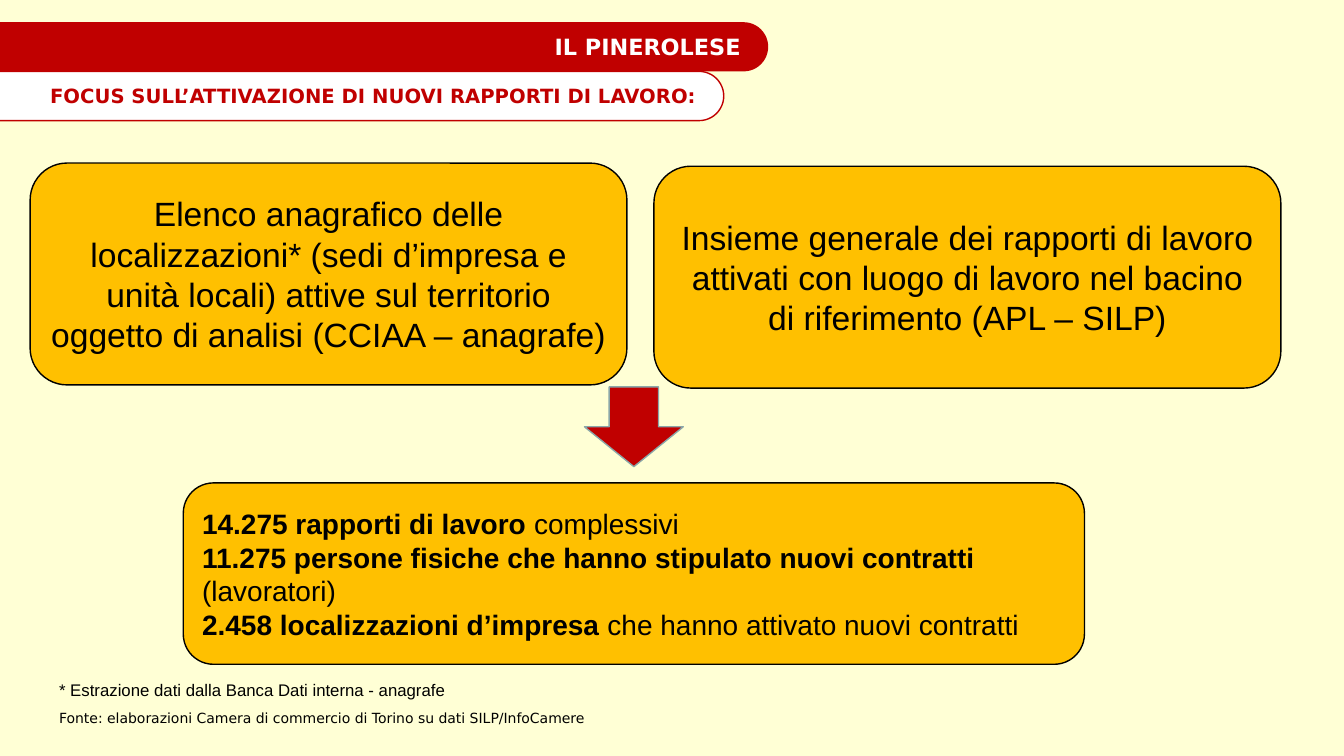
import dataclasses

import pptx
import pptx.dml.color
import pptx.enum.shapes
import pptx.enum.text
import pptx.util

Cm = pptx.util.Cm
Pt = pptx.util.Pt
Shapes = pptx.enum.shapes.MSO_SHAPE
Align = pptx.enum.text.PP_ALIGN
Anchor = pptx.enum.text.MSO_ANCHOR


@dataclasses.dataclass(frozen=True)
class Theme:
    background: str = "FFFFD5"
    red: str = "C00000"
    white: str = "FFFFFF"
    amber: str = "FFC000"
    black: str = "000000"
    arrow_outline: str = "8AA6A8"
    heading_font: str = "DejaVu Sans"
    body_font: str = "Arial"
    title_size: int = 16
    subtitle_size: int = 14
    source_size: int = 24
    result_size: int = 20
    note_size: int = 12
    credit_size: int = 10


THEME = Theme()


def rgb(value):
    return pptx.dml.color.RGBColor.from_string(value)


def write_text(shape, paragraphs, *, size, font=THEME.body_font, color=THEME.black,
               align=Align.LEFT, anchor=Anchor.MIDDLE, margins=(0.25, 0.13, 0.25, 0.13)):
    """Each paragraph is a list of (text, bold) pairs; margins run left, top, right, bottom."""
    frame = shape.text_frame
    frame.word_wrap = True
    frame.vertical_anchor = anchor
    (frame.margin_left, frame.margin_top,
     frame.margin_right, frame.margin_bottom) = map(Cm, margins)
    for index, pieces in enumerate(paragraphs):
        paragraph = frame.add_paragraph() if index else frame.paragraphs[0]
        paragraph.alignment = align
        for text, bold in pieces:
            run = paragraph.add_run()
            run.text = text
            run.font.name = font
            run.font.size = Pt(size)
            run.font.bold = bold
            run.font.color.rgb = rgb(color)


def add_block(slide, kind, box, *, fill, outline=None):
    shape = slide.shapes.add_shape(kind, *map(Cm, box))
    shape.shadow.inherit = False
    shape.fill.solid()
    shape.fill.fore_color.rgb = rgb(fill)
    if outline:
        shape.line.color.rgb = rgb(outline)
        shape.line.width = Pt(1)
    else:
        shape.line.fill.background()
    return shape


def add_panel(slide, box, paragraphs, **text_format):
    panel = add_block(slide, Shapes.ROUNDED_RECTANGLE, box,
                      fill=THEME.amber, outline=THEME.black)
    write_text(panel, paragraphs, **text_format)


def add_header(slide, box):
    """Two stacked tabs that bleed off the left edge of the slide."""
    left, top, width, height = box
    tab_height = height / 2
    tabs = [
        ("IL PINEROLESE", left, width, THEME.red, None, THEME.white, THEME.title_size),
        ("FOCUS SULL’ATTIVAZIONE DI NUOVI RAPPORTI DI LAVORO:", left + 1.09, width - 2.21,
         THEME.white, THEME.red, THEME.red, THEME.subtitle_size),
    ]
    for row, (text, tab_left, tab_width, fill, outline, color, size) in enumerate(tabs):
        tab_box = (tab_left, top + row * tab_height, tab_width, tab_height)
        tab = add_block(slide, Shapes.ROUNDED_RECTANGLE, tab_box, fill=fill, outline=outline)
        tab.adjustments[0] = 0.5
        write_text(tab, [[(text, True)]], size=size, font=THEME.heading_font, color=color,
                   align=Align.RIGHT, margins=(0, 0, 0.51, 0))


def add_sources(slide, box):
    """The two data sources side by side, the right one slightly lower."""
    left, top, width, height = box
    panel_height = height - 0.08
    registry_width, contracts_width = 15.04, 15.8
    panels = [
        ((left, top, registry_width, panel_height),
         "Elenco anagrafico delle localizzazioni* (sedi d’impresa e unità locali) attive "
         "sul territorio oggetto di analisi (CCIAA – anagrafe)"),
        ((left + width - contracts_width, top + 0.08, contracts_width, panel_height),
         "Insieme generale dei rapporti di lavoro attivati con luogo di lavoro nel bacino "
         "di riferimento (APL – SILP)"),
    ]
    for panel_box, text in panels:
        add_panel(slide, panel_box, [[(text, False)]],
                  size=THEME.source_size, align=Align.CENTER)


def add_results(slide, box):
    """Arrow at the top centre of the region, figures panel below it."""
    left, top, width, height = box
    arrow_width, arrow_height, panel_height = 2.49, 2.01, 4.57
    arrow_box = (left + (width - arrow_width) / 2, top, arrow_width, arrow_height)
    add_block(slide, Shapes.DOWN_ARROW, arrow_box,
              fill=THEME.red, outline=THEME.arrow_outline)
    figures = [
        [("14.275 rapporti di lavoro", True), (" complessivi", False)],
        [("11.275 persone fisiche che hanno stipulato nuovi contratti", True),
         (" (lavoratori)", False)],
        [("2.458 localizzazioni d’impresa ", True),
         ("che hanno attivato nuovi contratti", False)],
    ]
    add_panel(slide, (left, top + height - panel_height, width, panel_height),
              figures, size=THEME.result_size)


def add_notes_area(slide, box):
    left, top, width, height = box
    line_height = height / 2
    lines = [
        ("* Estrazione dati dalla Banca Dati interna - anagrafe",
         THEME.note_size, THEME.body_font),
        ("Fonte: elaborazioni Camera di commercio di Torino su dati SILP/InfoCamere",
         THEME.credit_size, THEME.heading_font),
    ]
    for row, (text, size, font) in enumerate(lines):
        line_box = (left, top + row * line_height, width, line_height)
        textbox = slide.shapes.add_textbox(*map(Cm, line_box))
        write_text(textbox, [[(text, False)]], size=size, font=font, anchor=Anchor.TOP)


def main():
    presentation = pptx.Presentation()
    presentation.slide_width = Cm(33.87)
    presentation.slide_height = Cm(19.05)
    slide = presentation.slides.add_slide(presentation.slide_layouts[6])
    slide.background.fill.solid()
    slide.background.fill.fore_color.rgb = rgb(THEME.background)

    add_header(slide, (-1.85, 0.56, 21.21, 2.48))
    add_sources(slide, (0.76, 4.11, 31.52, 5.67))
    add_results(slide, (4.62, 9.75, 22.71, 6.99))
    add_notes_area(slide, (1.24, 16.99, 28.37, 1.52))
    presentation.save("out.pptx")


if __name__ == "__main__":
    main()
